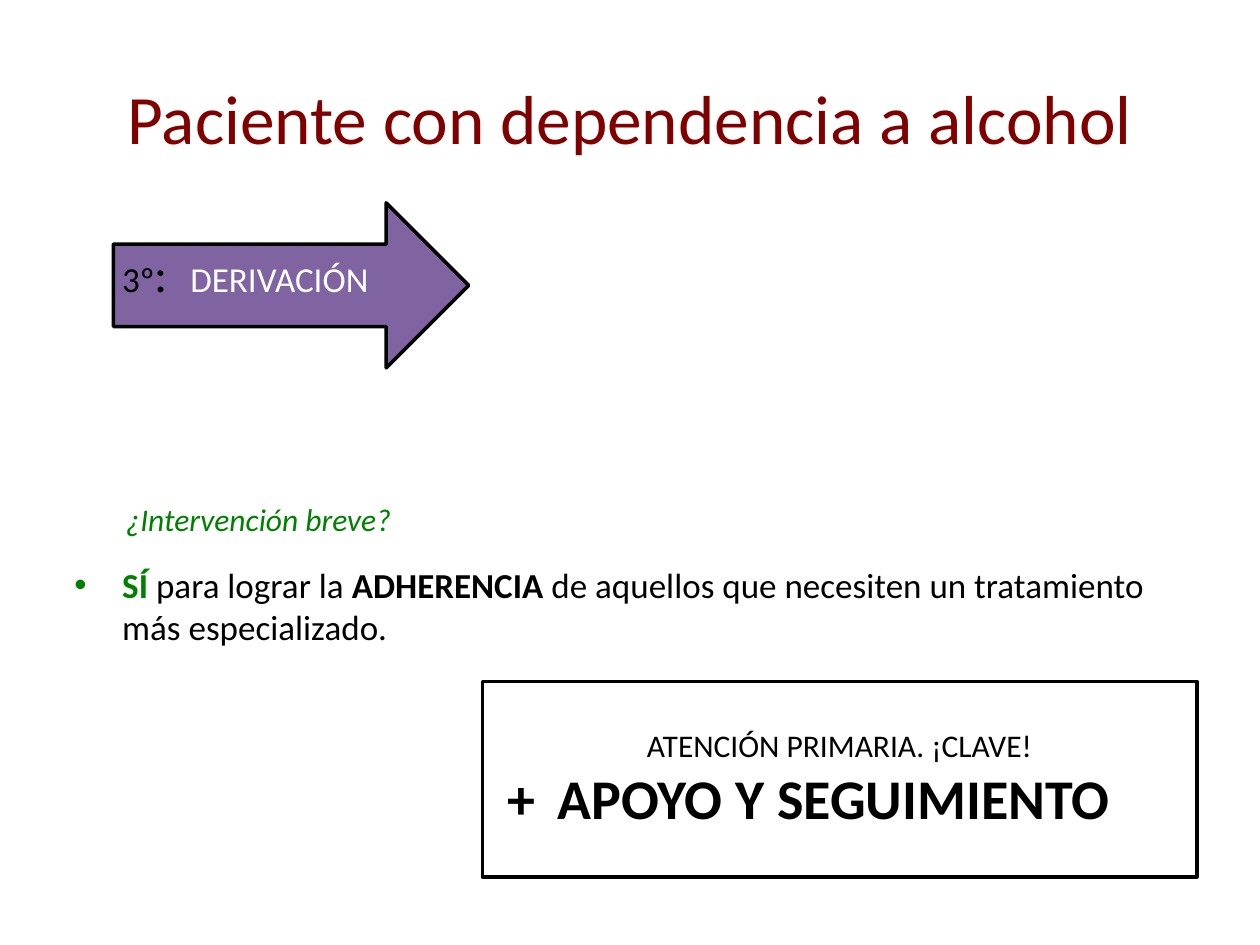
from pptx import Presentation
from pptx.dml.color import RGBColor
from pptx.enum.shapes import MSO_SHAPE
from pptx.enum.text import MSO_ANCHOR, PP_ALIGN
from pptx.oxml.ns import qn
from pptx.util import Inches, Pt
from lxml import etree

ARROW, RECT = MSO_SHAPE.RIGHT_ARROW, MSO_SHAPE.RECTANGLE
TOP, MIDDLE = MSO_ANCHOR.TOP, MSO_ANCHOR.MIDDLE
LEFT, CENTER = PP_ALIGN.LEFT, PP_ALIGN.CENTER
FONT = "Calibri"
COLORS = {"title": "800000", "accent": "008000", "arrow": "8064A2",
          "ink": "000000", "paper": "FFFFFF"}


def rgb(name):
    return RGBColor.from_string(COLORS[name])


def place(sp, box):
    sp.left, sp.top, sp.width, sp.height = (Inches(v) for v in box)


def add_run(p, text, size, color="ink", bold=False, italic=False):
    r = p.add_run()
    r.text = text
    r.font.name, r.font.size = FONT, Pt(size)
    r.font.bold, r.font.italic = bold, italic
    r.font.color.rgb = rgb(color)


def hang(p, margin, indent):
    """Set a hanging indent, whose margin also stops the first tab."""
    pPr = p._p.get_or_add_pPr()
    pPr.set("marL", str(Inches(margin)))
    pPr.set("indent", str(Inches(indent)))
    return pPr


def setup_frame(sp, anchor=TOP, insets=(0.1, 0.05, 0.1, 0.05)):
    tf = sp.text_frame
    tf.word_wrap = True
    tf.vertical_anchor = anchor
    tf.margin_left, tf.margin_top, tf.margin_right, tf.margin_bottom = (
        Inches(v) for v in insets)
    return tf


def add_outlined(shapes, kind, box, fill):
    sp = shapes.add_shape(kind, *(Inches(v) for v in box))
    sp.shadow.inherit = False
    sp.fill.solid()
    sp.fill.fore_color.rgb = rgb(fill)
    sp.line.color.rgb = rgb("ink")
    sp.line.width = Pt(2)
    return sp


def add_title(s, box):
    sp = s.shapes.title
    place(sp, box)
    p = setup_frame(sp, MIDDLE).paragraphs[0]
    p.alignment = CENTER
    add_run(p, "Paciente con dependencia a alcohol", 39.6, "title")


def add_body(s, box):
    sp = s.placeholders[1]
    place(sp, box)
    p = setup_frame(sp).paragraphs[0]
    p.space_before = Pt(4)
    pPr = hang(p, 0.38, -0.38)
    etree.SubElement(pPr, qn("a:buFont")).set("typeface", "Arial")
    etree.SubElement(pPr, qn("a:buChar")).set("char", "•")
    add_run(p, "SÍ", 20, "accent", bold=True)
    add_run(p, " para lograr la ", 20)
    add_run(p, "ADHERENCIA ", 20, bold=True)
    add_run(p, "de aquellos que necesiten un tratamiento más especializado.", 20)


def add_step_arrow(s, box):
    x, y, w, h = box
    group = s.shapes.add_group_shape()
    add_outlined(group.shapes, ARROW, box, "arrow")
    label = group.shapes.add_textbox(
        Inches(x), Inches(y + h / 4), Inches(w - h / 4), Inches(h / 2))
    p = setup_frame(label, MIDDLE, (0.07, 0.07, 0.28, 0.21)).paragraphs[0]
    p.line_spacing = 0.9
    hang(p, 0.54, -0.54)
    add_run(p, "3º", 20)
    add_run(p, ":\t", 28)
    add_run(p, "DERIVACIÓN", 20, "paper")


def add_question(s, box):
    sp = s.shapes.add_textbox(*(Inches(v) for v in box))
    p = setup_frame(sp).paragraphs[0]
    add_run(p, "¿Intervención breve?", 18, "accent", italic=True)


def add_key_box(s, box):
    sp = add_outlined(s.shapes, RECT, box, "paper")
    tf = setup_frame(sp, insets=(0.1, 0.35, 0.1, 0.05))
    p = tf.paragraphs[0]
    p.alignment = CENTER
    add_run(p, "ATENCIÓN PRIMARIA. ¡CLAVE!", 18)
    p = tf.add_paragraph()
    p.alignment = LEFT
    hang(p, 0.5, -0.4)
    add_run(p, "+\tAPOYO Y SEGUIMIENTO", 32, bold=True)


def main():
    prs = Presentation()
    prs.slide_width, prs.slide_height = Inches(10), Inches(7.5)
    s = prs.slides.add_slide(prs.slide_layouts[1])
    add_title(s, (0.5, 0.3, 9, 1.25))
    add_body(s, (0.49, 4.42, 9, 3.08))
    add_step_arrow(s, (0.9, 1.61, 2.82, 1.31))
    add_key_box(s, (3.83, 5.41, 5.67, 1.55))
    add_question(s, (0.9, 3.92, 4, 0.4))
    prs.save("out.pptx")


if __name__ == "__main__":
    main()
